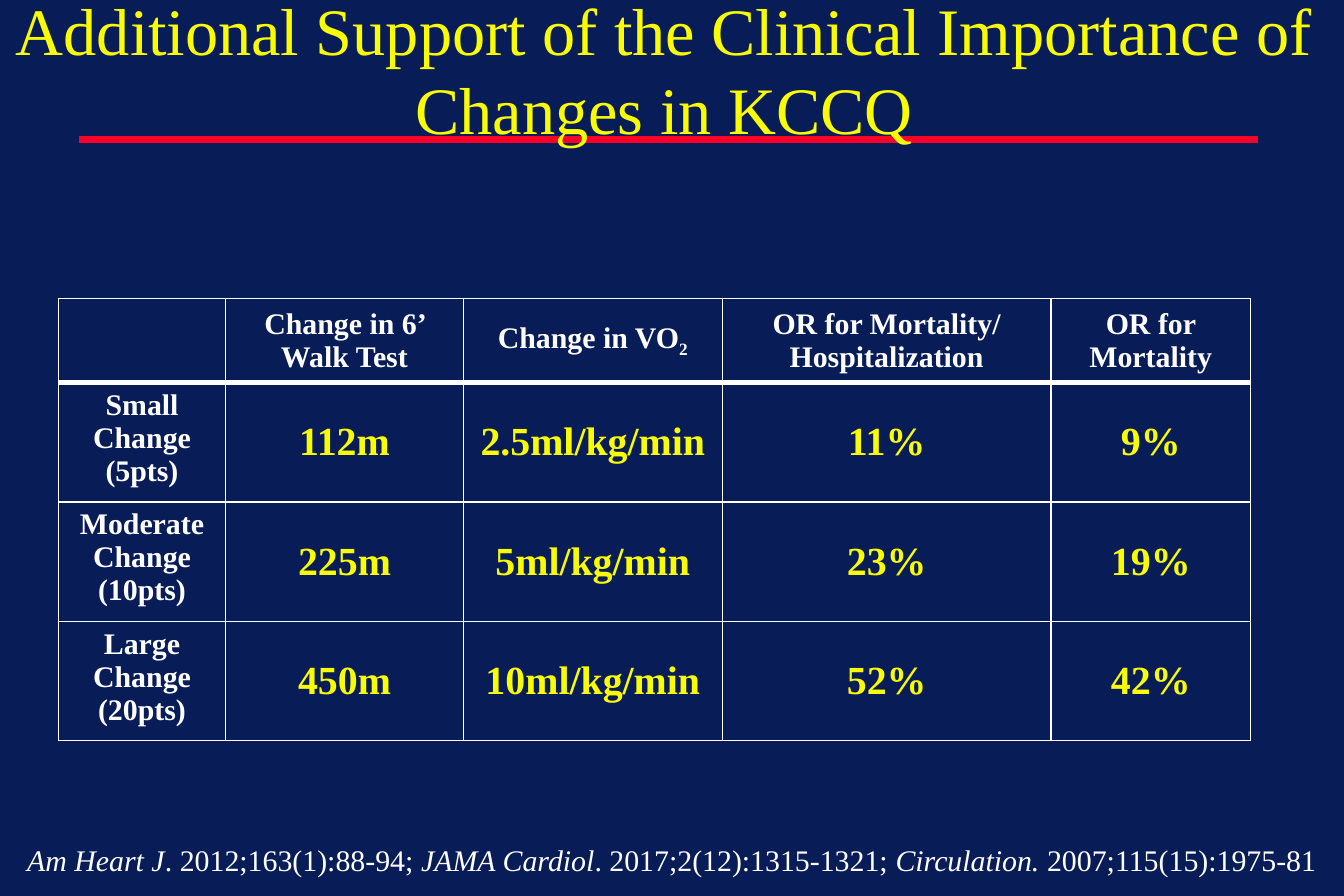
from dataclasses import dataclass

from lxml.etree import SubElement
from pptx import Presentation
from pptx.dml.color import RGBColor
from pptx.enum.shapes import MSO_CONNECTOR
from pptx.enum.text import MSO_ANCHOR, MSO_AUTO_SIZE, PP_ALIGN
from pptx.oxml.ns import qn
from pptx.slide import Slide
from pptx.table import _Cell as Cell
from pptx.util import Cm, Pt


@dataclass(frozen=True)
class Theme:
    font: str = "Times New Roman"
    navy: str = "081D58"
    yellow: str = "FAFD00"
    red: str = "FC0128"
    white: str = "FFFFFF"
    title_size: int = 40
    value_size: int = 24
    label_size: int = 18
    thin: int = 1
    thick: int = 3
    rule: int = 4


@dataclass(frozen=True)
class Column:
    heading: str
    width: float
    values: tuple[str, ...]
    subscript: str = ""
    is_label: bool = False


@dataclass(frozen=True)
class Citation:
    journal: str
    reference: str


THEME = Theme()
HEADER_HEIGHT, ROW_HEIGHT = 1.78, 2.54
COLUMNS = (
    Column("", 3.56, ("Small Change (5pts)", "Moderate Change (10pts)", "Large Change (20pts)"), is_label=True),
    Column("Change in 6’ Walk Test", 5.05, ("112m", "225m", "450m")),
    Column("Change in VO", 5.51, ("2.5ml/kg/min", "5ml/kg/min", "10ml/kg/min"), subscript="2"),
    Column("OR for Mortality/\nHospitalization", 6.99, ("11%", "23%", "52%")),
    Column("OR for Mortality", 4.24, ("9%", "19%", "42%")),
)
CITATIONS = (
    Citation("Am Heart J", ". 2012;163(1):88-94; "),
    Citation("JAMA Cardiol", ". 2017;2(12):1315-1321; "),
    Citation("Circulation.", " 2007;115(15):1975-81"),
)


def style_font(font, size: int, color: str, bold: bool = False) -> None:
    font.name = THEME.font
    font.size = Pt(size)
    font.bold = bold
    font.color.rgb = RGBColor.from_string(color)


def add_title(page: Slide, text: str) -> None:
    title = page.shapes.title
    title.left, title.top, title.width, title.height = Cm(0), Cm(0.84), Cm(28.24), Cm(2.44)
    frame = title.text_frame
    frame.text = text
    frame.word_wrap = True
    frame.auto_size = MSO_AUTO_SIZE.NONE
    frame.vertical_anchor = MSO_ANCHOR.BOTTOM
    para = frame.paragraphs[0]
    para.alignment = PP_ALIGN.CENTER
    style_font(para.font, THEME.title_size, THEME.yellow)


def add_title_rule(page: Slide) -> None:
    """Draw the red line behind the title."""
    rule = page.shapes.add_connector(MSO_CONNECTOR.STRAIGHT, Cm(1.68), Cm(2.97), Cm(26.75), Cm(2.97))
    rule.line.color.rgb = RGBColor.from_string(THEME.red)
    rule.line.width = Pt(THEME.rule)
    SubElement(rule._element.spPr, qn("a:effectLst"))
    page.shapes.title._element.addprevious(rule._element)


def set_borders(cell: Cell, top: int, bottom: int) -> None:
    properties = cell._tc.get_or_add_tcPr()
    widths = {"a:lnL": THEME.thin, "a:lnR": THEME.thin, "a:lnT": top, "a:lnB": bottom}
    for tag, width in widths.items():
        line = SubElement(properties, qn(tag), w=str(Pt(width)))
        fill = SubElement(line, qn("a:solidFill"))
        SubElement(fill, qn("a:srgbClr"), val=THEME.white)


def write_cell(cell: Cell, text: str, size: int, color: str, anchor: MSO_ANCHOR) -> None:
    cell.text = text
    cell.vertical_anchor = anchor
    cell.margin_left = cell.margin_right = Cm(0.25)
    cell.margin_top = cell.margin_bottom = Cm(0.13)
    for para in cell.text_frame.paragraphs:
        para.alignment = PP_ALIGN.CENTER
        style_font(para.font, size, color, bold=True)


def add_heading(cell: Cell, column: Column) -> None:
    set_borders(cell, THEME.thin, THEME.thick)
    cell.fill.solid()
    cell.fill.fore_color.rgb = RGBColor.from_string(THEME.navy)
    write_cell(cell, column.heading, THEME.label_size, THEME.white, MSO_ANCHOR.MIDDLE)
    if column.subscript:
        span = cell.text_frame.paragraphs[0].add_run()
        span.text = column.subscript
        span.font._element.set("baseline", "-25000")


def add_value(cell: Cell, column: Column, row: int) -> None:
    set_borders(cell, THEME.thick if row == 1 else THEME.thin, THEME.thin)
    cell.fill.background()
    text = column.values[row - 1]
    if column.is_label:
        write_cell(cell, text, THEME.label_size, THEME.white, MSO_ANCHOR.TOP)
    else:
        write_cell(cell, text, THEME.value_size, THEME.yellow, MSO_ANCHOR.MIDDLE)


def add_outcome_table(page: Slide) -> None:
    row_count = len(COLUMNS[0].values) + 1
    width = sum(column.width for column in COLUMNS)
    height = HEADER_HEIGHT + ROW_HEIGHT * (row_count - 1)
    table = page.shapes.add_table(
        row_count, len(COLUMNS), Cm(1.24), Cm(6.35), Cm(width), Cm(height)
    ).table
    table.first_row = table.horz_banding = False
    for row in range(row_count):
        table.rows[row].height = Cm(ROW_HEIGHT if row else HEADER_HEIGHT)
    for index, column in enumerate(COLUMNS):
        table.columns[index].width = Cm(column.width)
        add_heading(table.cell(0, index), column)
        for row in range(1, row_count):
            add_value(table.cell(row, index), column, row)


def add_citations(page: Slide) -> None:
    box = page.shapes.add_textbox(Cm(0.33), Cm(17.78), Cm(28.35), Cm(1.02))
    frame = box.text_frame
    frame.word_wrap = False
    frame.auto_size = MSO_AUTO_SIZE.SHAPE_TO_FIT_TEXT
    para = frame.paragraphs[0]
    style_font(para.font, THEME.label_size, THEME.white)
    for citation in CITATIONS:
        for text, italic in ((citation.journal, True), (citation.reference, False)):
            span = para.add_run()
            span.text = text
            span.font.italic = italic


def main() -> None:
    deck = Presentation()
    deck.slide_width, deck.slide_height = Cm(28.58), Cm(19.05)
    page = deck.slides.add_slide(deck.slide_layouts.get_by_name("Title Only"))
    page.background.fill.solid()
    page.background.fill.fore_color.rgb = RGBColor.from_string(THEME.navy)
    add_title(page, "Additional Support of the Clinical Importance of Changes in KCCQ")
    add_title_rule(page)
    add_outcome_table(page)
    add_citations(page)
    deck.save("out.pptx")


if __name__ == "__main__":
    main()
